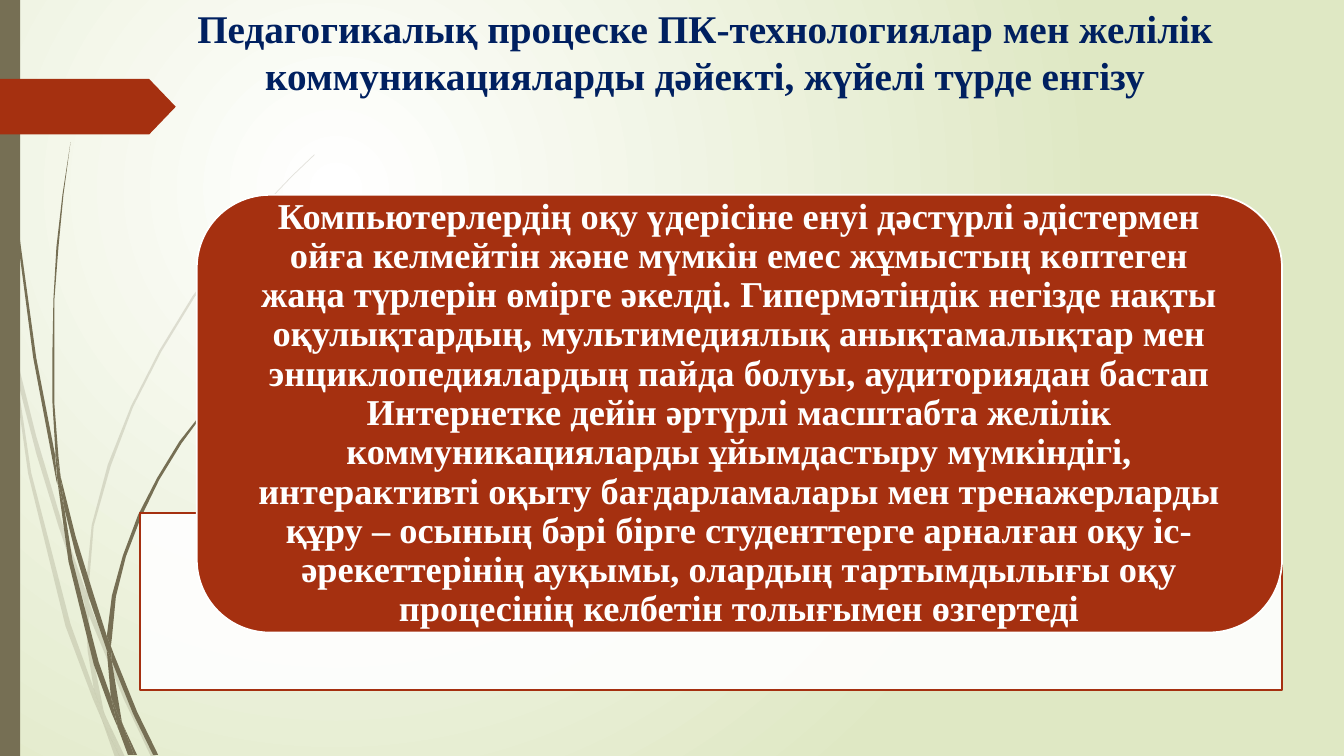
"""Build a slide with a title, a text panel and grass blades on the left."""
from lxml.etree import SubElement
from pptx import Presentation
from pptx.dml.color import RGBColor
from pptx.enum.shapes import MSO_SHAPE as Preset
from pptx.enum.text import MSO_ANCHOR as Anchor, PP_ALIGN as Align
from pptx.oxml.ns import qn
from pptx.util import Cm, Pt

COLORS = {"white": "FFFFFF", "lime": "DFE8C4", "olive": "766F54",
          "rust": "A53010", "navy": "002060"}
FONT = "Times New Roman"
WIDTH, HEIGHT = 33.87, 19.05
GRASS_UNIT = 0.0254

TITLE = ("Педагогикалық процеске ПК-технологиялар мен желілік "
         "коммуникацияларды дәйекті, жүйелі түрде енгізу")
BODY = ("Компьютерлердің оқу үдерісіне енуі дәстүрлі әдістермен ойға келмейтін "
        "және мүмкін емес жұмыстың көптеген жаңа түрлерін өмірге әкелді. "
        "Гипермәтіндік негізде нақты оқулықтардың, мультимедиялық "
        "анықтамалықтар мен энциклопедиялардың пайда болуы, аудиториядан "
        "бастап Интернетке дейін әртүрлі масштабта желілік коммуникацияларды "
        "ұйымдастыру мүмкіндігі, интерактивті оқыту бағдарламалары мен "
        "тренажерларды құру – осының бәрі бірге студенттерге арналған оқу "
        "іс-әрекеттерінің ауқымы, олардың тартымдылығы оқу процесінің "
        "келбетін толығымен өзгертеді")

PALE_BLADES = [
    [(11, 350), (9, 322), (0, 282), (0, 299), (10, 344)],
    [(58, 522), (84, 599), (85, 586), (62, 520), (36, 433), (14, 345),
     (17, 376), (36, 450)],
    [(92, 607), (88, 596), (88, 610), (123, 694), (150, 751), (155, 751),
     (127, 692)],
    [(119, 751), (124, 751), (105, 711)],
    [(93, 683), (70, 619), (31, 469), (17, 376), (11, 350), (28, 470),
     (65, 621), (92, 693), (101, 714), (99, 707)],
    [(84, 599), (87, 646), (93, 683), (96, 692), (105, 711), (103, 706),
     (91, 646), (88, 610), (88, 608)],
    [(88, 584), (93, 522), (110, 462), (132, 404), (160, 349), (193, 295),
     (229, 245), (268, 198), (290, 175), (312, 154), (312, 153), (289, 175),
     (268, 197), (228, 244), (191, 294), (158, 348), (130, 403), (107, 461),
     (91, 521), (85, 584), (85, 586), (88, 596)],
    [(101, 714), (114, 751), (119, 751)],
    [(88, 608), (88, 610), (88, 596), (85, 586), (84, 599)],
    [(96, 692), (93, 683), (99, 707), (101, 714), (119, 751), (105, 711)],
]
DARK_BLADES = [
    [(7, 110), (17, 233), (33, 355), (56, 477), (57, 481), (55, 457),
     (55, 453), (36, 355), (19, 232), (8, 109), (5, 48), (4, 0), (3, 0),
     (4, 48)],
    [(88, 592), (106, 645), (106, 633), (106, 631), (93, 590), (75, 532),
     (60, 472), (64, 505), (75, 549)],
    [(113, 649), (110, 641), (111, 656), (132, 708), (152, 749), (157, 749),
     (136, 706)],
    [(110, 691), (98, 657), (72, 556), (64, 505), (57, 477), (68, 557),
     (93, 659), (111, 708), (117, 722), (116, 717)],
    [(60, 472), (58, 453), (54, 401), (54, 349), (54, 297), (58, 245),
     (63, 193), (70, 141), (62, 193), (56, 245), (53, 297), (52, 349),
     (52, 399), (55, 449)],
    [(133, 749), (136, 749), (122, 719)],
    [(57, 477), (64, 505), (60, 472), (55, 449), (55, 453)],
    [(111, 633), (115, 592), (125, 552), (140, 513), (158, 476), (180, 440),
     (205, 406), (231, 374), (245, 359), (261, 344), (260, 344), (245, 358),
     (231, 373), (204, 405), (178, 438), (156, 474), (137, 511), (122, 551),
     (111, 591), (106, 631), (110, 641)],
    [(117, 722), (127, 749), (131, 749)],
    [(106, 645), (110, 691), (116, 706), (122, 719), (121, 716), (111, 656),
     (109, 651)],
    [(106, 645), (109, 651), (111, 656), (110, 641), (106, 631), (106, 633)],
    [(116, 706), (110, 691), (116, 717), (117, 722), (130, 749), (133, 749),
     (122, 719)],
]


def color(name):
    """Return the palette colour with this name."""
    return RGBColor.from_string(COLORS[name])


def paint(shape, fill, opacity=100, line=None):
    """Give a shape its fill, opacity and outline."""
    shape.shadow.inherit = False
    shape.fill.solid()
    shape.fill.fore_color.rgb = color(fill)
    if opacity < 100:
        solid = shape.element.spPr.find(qn("a:solidFill"))
        SubElement(solid[0], qn("a:alpha"), val=str(opacity * 1000))
    if line:
        shape.line.color.rgb = color(line)
        shape.line.width = Pt(1.25)
    else:
        shape.line.fill.background()


def add_box(slide, preset, box, fill, **style):
    """Add a painted preset shape in a box given in centimetres."""
    shape = slide.shapes.add_shape(preset, *map(Cm, box))
    paint(shape, fill, **style)
    return shape


def write(shape, text, size, ink):
    """Put one centred bold paragraph into a shape."""
    frame = shape.text_frame
    frame.word_wrap = True
    paragraph = frame.paragraphs[0]
    paragraph.text = text
    paragraph.alignment = Align.CENTER
    font = paragraph.font
    font.name, font.size, font.bold = FONT, Pt(size), True
    font.color.rgb = color(ink)
    return frame, paragraph


def add_grass(slide, left, top, blades, opacity):
    """Draw each blade outline relative to the given corner."""
    for blade in blades:
        outline = [(Cm(left + x * GRASS_UNIT), Cm(top + y * GRASS_UNIT))
                   for x, y in blade]
        builder = slide.shapes.build_freeform(*outline[0])
        builder.add_line_segments(outline[1:])
        paint(builder.convert_to_shape(), "olive", opacity)


def add_background(slide):
    """Fill the background with a round gradient centred at the upper left."""
    fill = slide.background.fill
    fill.gradient()
    for stop, name, position in zip(fill.gradient_stops, ("white", "lime"), (0, 1)):
        stop.color.rgb = color(name)
        stop.position = position
    gradient = slide.element.find(".//" + qn("a:gradFill"))
    gradient.remove(gradient.find(qn("a:lin")))
    circle = SubElement(gradient, qn("a:path"), {"path": "circle"})
    SubElement(circle, qn("a:fillToRect"),
               l="50000", t="50000", r="100000", b="100000")


def add_side_decor(slide, left, top, height):
    """Draw the grass, the side bar and the arrow tab."""
    add_grass(slide, left, top, PALE_BLADES, 20)
    add_grass(slide, left, top, DARK_BLADES, 100)
    add_box(slide, Preset.RECTANGLE, (left, top, 0.51, height), "olive")
    tab = add_box(slide, Preset.PENTAGON, (left, top + 1.99, 4.43, 1.4), "rust")
    tab.adjustments[0] = 0.48


def add_title(slide, box):
    """Write the slide title at the top of its box."""
    title = slide.shapes.add_textbox(*map(Cm, box))
    frame, _ = write(title, TITLE, 28, "navy")
    frame.margin_top = Cm(0.1)
    frame.vertical_anchor = Anchor.TOP


def add_panel(slide, left, top, width, height):
    """Place the rounded text panel over the pale base of its box."""
    base_top, indent, overhang = 8.01, 1.43, 1.45
    add_box(slide, Preset.RECTANGLE,
            (left, top + base_top, width, height - base_top),
            "white", opacity=90, line="rust")
    panel = add_box(slide, Preset.ROUNDED_RECTANGLE,
                    (left + indent, top, width - indent, height - overhang),
                    "rust", line="white")
    frame, paragraph = write(panel, BODY, 26, "white")
    frame.margin_left = frame.margin_right = Cm(0.76)
    frame.margin_top = frame.margin_bottom = Cm(0)
    frame.vertical_anchor = Anchor.MIDDLE
    paragraph.line_spacing = 0.9


def main():
    """Build and save the presentation."""
    presentation = Presentation()
    presentation.slide_width, presentation.slide_height = Cm(WIDTH), Cm(HEIGHT)
    slide = presentation.slides.add_slide(presentation.slide_layouts[6])
    add_background(slide)
    add_side_decor(slide, 0, 0, HEIGHT)
    add_title(slide, (4.29, 0, 26.95, 3.56))
    add_panel(slide, 3.53, 4.91, 28.78, 12.48)
    presentation.save("out.pptx")


if __name__ == "__main__":
    main()
